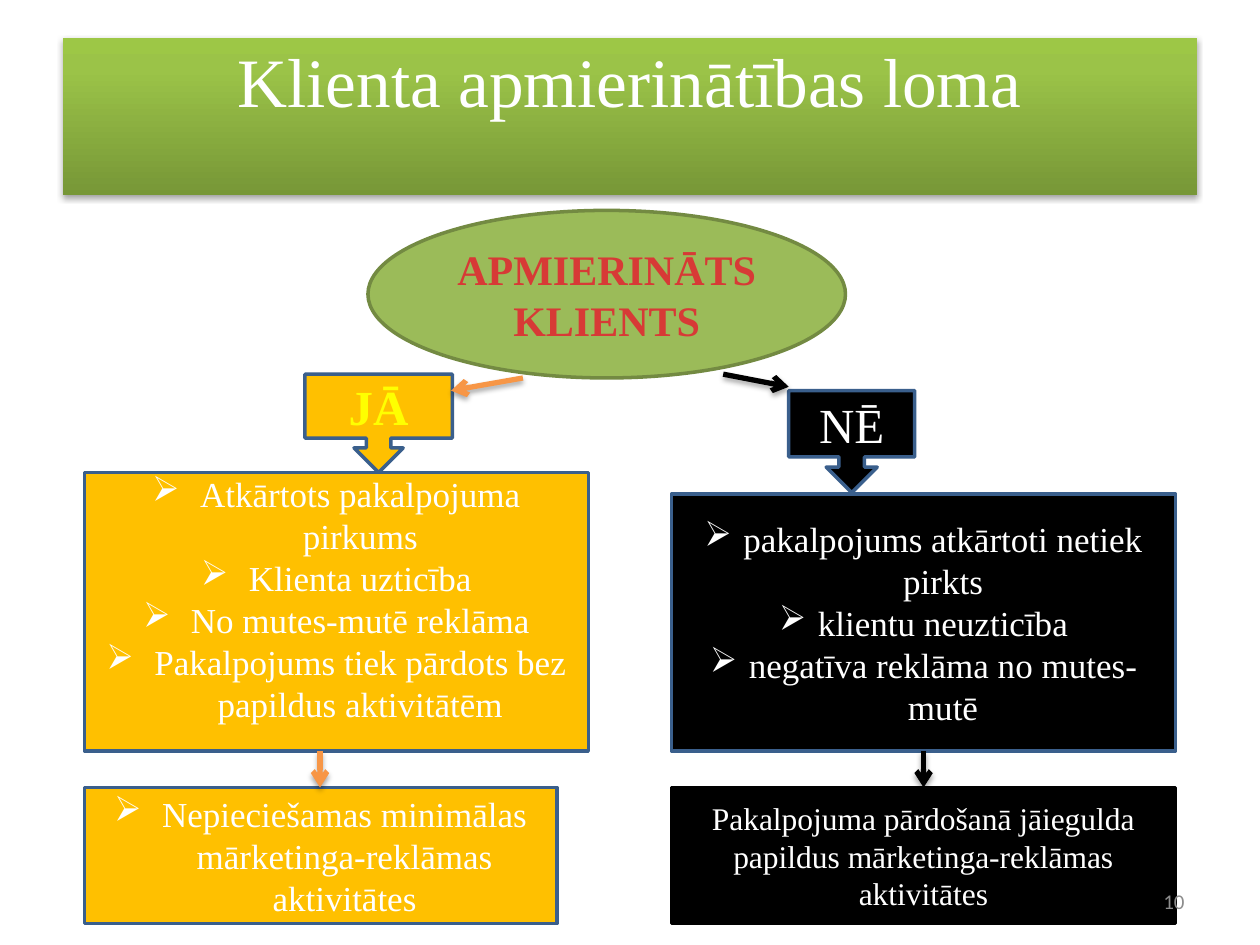
from lxml import etree
from pptx import Presentation
from pptx import util as u
from pptx.dml.color import RGBColor
from pptx.enum import shapes, text
from pptx.oxml import parse_xml
from pptx.oxml.ns import nsdecls, qn

COLORS = {
    "white": "FFFFFF", "black": "000000", "amber": "FFC000", "orange": "F79646",
    "green": "9BBB59", "olive": "738A42", "blue": "3A5F8C", "red": "D73A36",
    "yellow": "FFFF00", "gray": "8C8C8C",
}
TITLE_STOPS = [(0, "779737"), (80, "9BC348"), (100, "9DC746")]
SERIF = "Times New Roman"
KIND = shapes.MSO_SHAPE
ANCHOR = text.MSO_ANCHOR
ALIGN = text.PP_ALIGN

# Content: kind, (left, top, width, height), fill, line, paragraphs, format
TITLE = (KIND.RECTANGLE, (0.5, 0.3, 9, 1.25), None, None,
         ["Klienta apmierinātības loma"],
         dict(size=39.6, anchor=ANCHOR.TOP, margin_top=0))
FLOW = [
    (KIND.OVAL, (2.92, 1.67, 3.79, 1.33), "green", "olive",
     ["APMIERINĀTS KLIENTS"], dict(size=24, color="red", bold=True)),
    (KIND.RECTANGLE, (0.67, 3.75, 4, 2.21), "amber", "blue",
     ["Atkārtots pakalpojuma pirkums", "Klienta uzticība", "No mutes-mutē reklāma",
      "Pakalpojums tiek pārdots bez papildus aktivitātēm"],
     dict(size=20, indent=0.38, anchor=ANCHOR.TOP, margin_top=0)),
    (KIND.DOWN_ARROW_CALLOUT, (2.42, 2.97, 1.17, 0.78), "amber", "blue",
     ["JĀ"], dict(size=28, color="yellow", bold=True)),
    (KIND.DOWN_ARROW_CALLOUT, (6.26, 3.1, 1, 0.81), "black", "blue",
     ["NĒ"], dict(size=28)),
    (KIND.RECTANGLE, (5.33, 3.92, 4, 2.04), "black", "blue",
     ["pakalpojums atkārtoti netiek pirkts", "klientu neuzticība",
      "negatīva reklāma no mutes-mutē"], dict(size=20, indent=0.31)),
    (KIND.RECTANGLE, (0.67, 6.25, 3.75, 1.08), "amber", "blue",
     ["Nepieciešamas minimālas mārketinga-reklāmas aktivitātes"],
     dict(size=20, indent=0.38)),
    (KIND.RECTANGLE, (5.33, 6.25, 4, 1.08), "black", "black",
     ["Pakalpojuma pārdošanā jāiegulda papildus mārketinga-reklāmas aktivitātes"],
     dict(size=18)),
]
# Arrows: start, end, colour
ARROWS = [
    ((5.74, 2.97), (6.26, 3.07), "black"),
    ((4.15, 3), (3.58, 3.1), "orange"),
    ((2.54, 5.96), (2.54, 6.25), "orange"),
    ((7.33, 5.96), (7.33, 6.25), "black"),
]
PAGE_NUMBER = ("10", (7.17, 6.95, 2.33, 0.4))


def rgb(name):
    return RGBColor.from_string(COLORS[name])


def add_shadow(part):
    """Give a shape or connector the soft shadow below it."""
    props = part._element.spPr
    for old in props.findall(qn("a:effectLst")):
        props.remove(old)
    props.append(parse_xml(
        f'<a:effectLst {nsdecls("a")}><a:outerShdw blurRad="{u.Pt(3.1)}" '
        f'dist="{u.Pt(1.8)}" dir="5400000" rotWithShape="0"><a:srgbClr val="000000">'
        '<a:alpha val="35000"/></a:srgbClr></a:outerShdw></a:effectLst>'))


def add_bullet(paragraph, indent):
    props = paragraph._p.get_or_add_pPr()
    props.set("marL", str(u.Inches(indent)))
    props.set("indent", str(-u.Inches(indent)))
    etree.SubElement(props, qn("a:buChar")).set("char", "➢")


def write(frame, lines, size, color="white", bold=False, font=SERIF, indent=0,
          align=ALIGN.CENTER, anchor=ANCHOR.MIDDLE, margin_top=0.05):
    frame_format = {"word_wrap": True, "vertical_anchor": anchor,
                    "margin_top": u.Inches(margin_top)}
    for key, value in frame_format.items():
        setattr(frame, key, value)
    for number, line in enumerate(lines):
        paragraph = frame.add_paragraph() if number else frame.paragraphs[0]
        paragraph.alignment = align
        if indent:
            add_bullet(paragraph, indent)
        run = paragraph.add_run()
        run.text = line
        for key, value in {"name": font, "size": u.Pt(size), "bold": bold}.items():
            setattr(run.font, key, value)
        run.font.color.rgb = rgb(color)


def add_box(slide, kind, place, fill, line, lines, style):
    box = slide.shapes.add_shape(kind, *map(u.Inches, place))
    box.shadow.inherit = False
    if fill:
        box.fill.solid()
        box.fill.fore_color.rgb = rgb(fill)
    if line:
        box.line.color.rgb = rgb(line)
        box.line.width = u.Pt(2)
    else:
        box.line.fill.background()
    write(box.text_frame, lines, **style)
    return box


def add_title(slide):
    title = add_box(slide, *TITLE)
    stops = "".join(f'<a:gs pos="{pos * 1000}"><a:srgbClr val="{color}"/></a:gs>'
                    for pos, color in TITLE_STOPS)
    title._element.spPr.find(qn("a:prstGeom")).addnext(parse_xml(
        f'<a:gradFill {nsdecls("a")} rotWithShape="1"><a:gsLst>{stops}</a:gsLst>'
        '<a:lin ang="16200000" scaled="0"/></a:gradFill>'))
    add_shadow(title)


def add_arrow(slide, start, end, color):
    arrow = slide.shapes.add_connector(shapes.MSO_CONNECTOR.STRAIGHT,
                                       *map(u.Inches, start + end))
    arrow.line.color.rgb = rgb(color)
    arrow.line.width = u.Pt(3)
    etree.SubElement(arrow.line._get_or_add_ln(), qn("a:tailEnd")).set("type", "arrow")
    add_shadow(arrow)


def main():
    deck = Presentation()
    deck.slide_width, deck.slide_height = u.Inches(10), u.Inches(7.5)
    slide = deck.slides.add_slide(deck.slide_layouts[6])

    add_title(slide)
    for part in FLOW:
        add_box(slide, *part)
    for arrow in ARROWS:
        add_arrow(slide, *arrow)

    # Page number
    number, place = PAGE_NUMBER
    page = slide.shapes.add_textbox(*map(u.Inches, place))
    write(page.text_frame, [number], size=12, color="gray", font="Calibri",
          align=ALIGN.RIGHT)
    deck.save("out.pptx")


if __name__ == "__main__":
    main()
